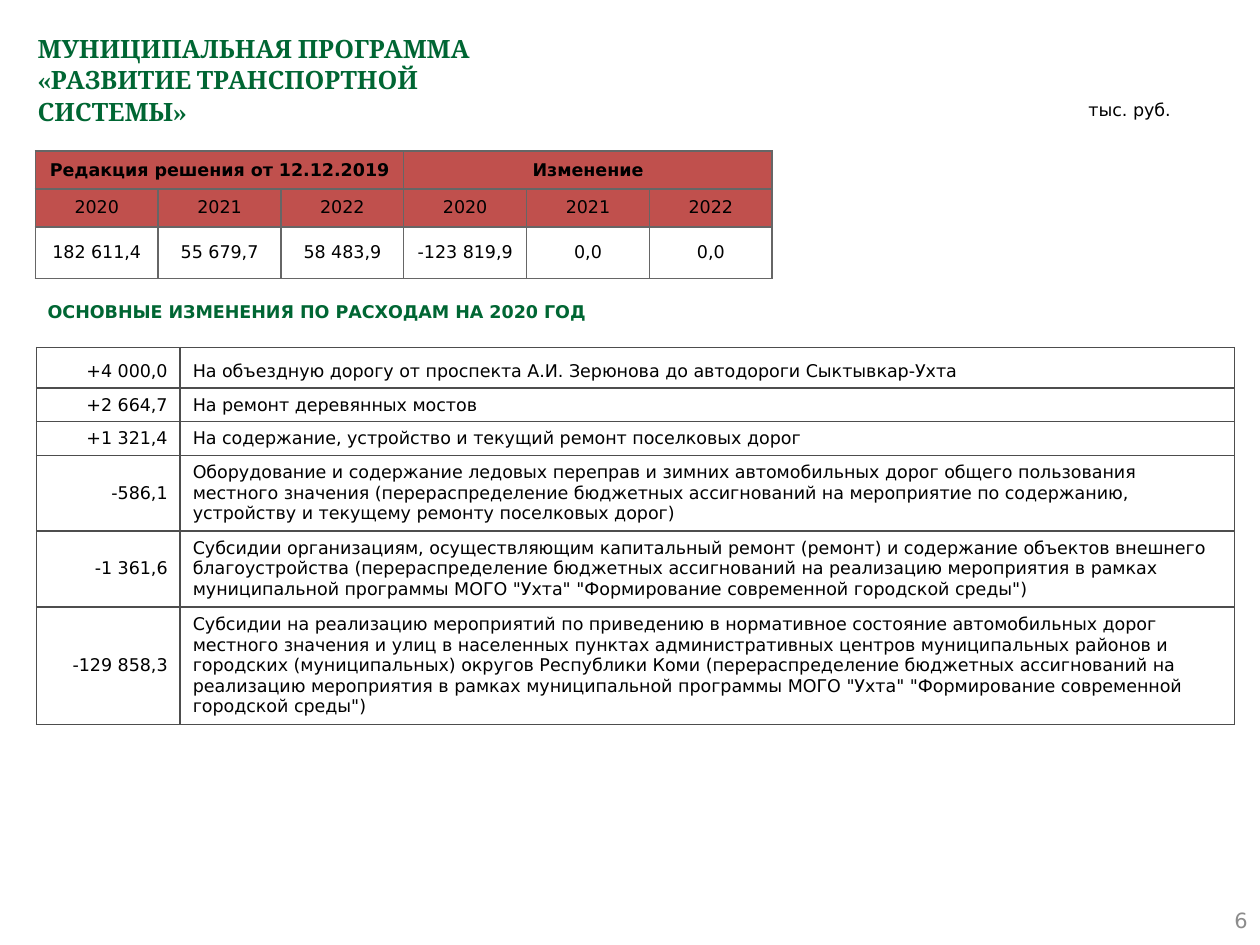
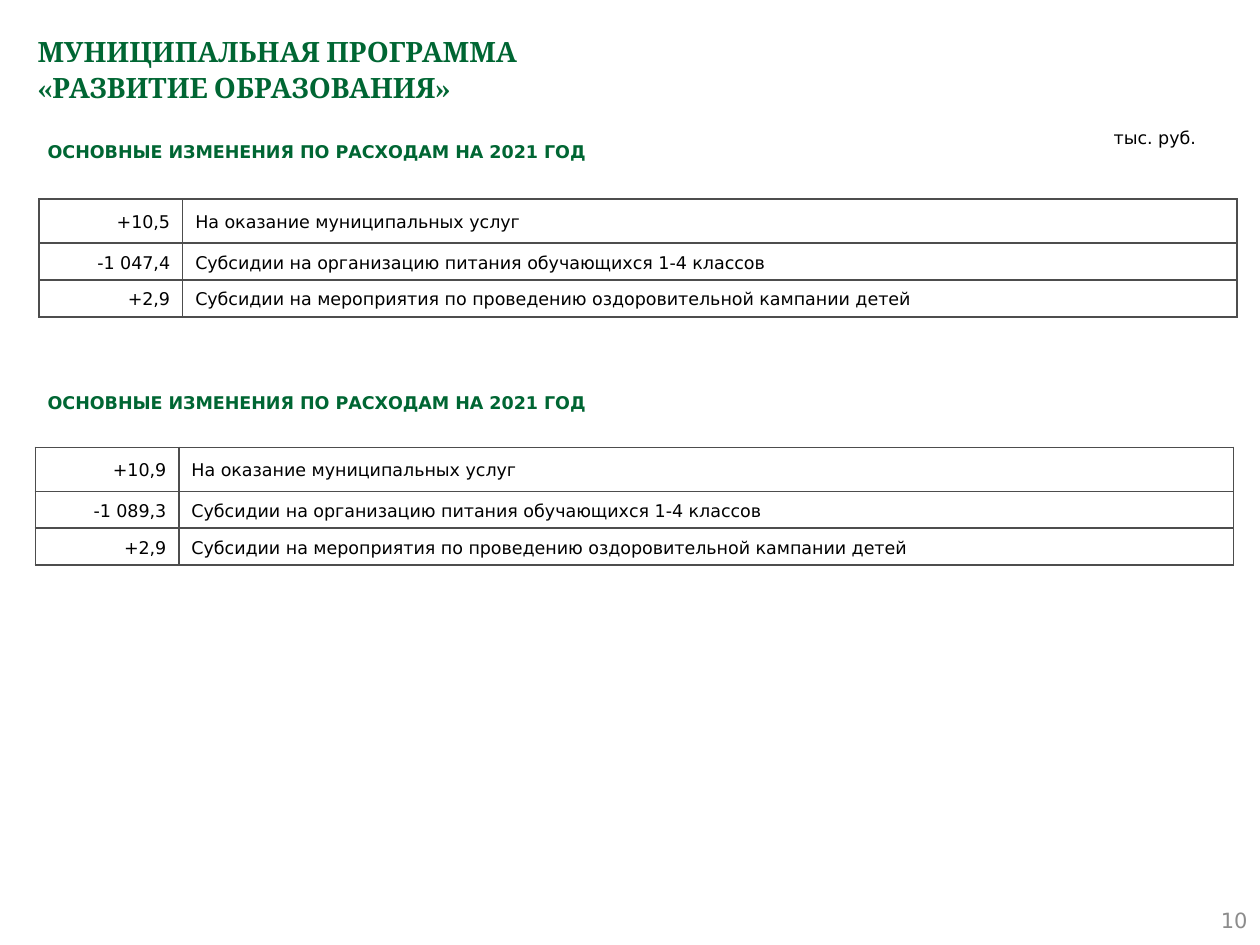
"""Build two slides on changes to municipal programme budgets."""
from lxml.etree import SubElement
from pptx import Presentation
from pptx.dml.color import RGBColor
from pptx.enum.shapes import MSO_SHAPE as Shape
from pptx.enum.text import MSO_ANCHOR as Anchor, PP_ALIGN as Align
from pptx.oxml.ns import qn
from pptx.util import Inches, Pt

GREEN, RED, BLACK, GRAY = "006633", "C0504D", "000000", "8C8C8C"
SUMMARY_BORDER, CHANGES_BORDER = "666666", "4D4D4D"
TITLE_FONT, BODY_FONT = "Cambria", "DejaVu Sans"
CHANGE_COLUMNS = [1.14, 8.37]
EDUCATION_ITEMS = [
    "На оказание муниципальных услуг",
    "Субсидии на организацию питания обучающихся 1-4 классов",
    "Субсидии на мероприятия по проведению оздоровительной кампании детей",
]
SUMMARY = [
    ["Редакция решения от 12.12.2019", "", "", "Изменение", "", ""],
    ["2020", "2021", "2022"] * 2,
    ["182 611,4", "55 679,7", "58 483,9", "-123 819,9", "0,0", "0,0"],
]
TRANSPORT_CHANGES = [
    ("+4 000,0", "На объездную дорогу от проспекта А.И. Зерюнова до автодороги Сыктывкар-Ухта"),
    ("+2 664,7", "На ремонт деревянных мостов"),
    ("+1 321,4", "На содержание, устройство и текущий ремонт поселковых дорог"),
    ("-586,1", "Оборудование и содержание ледовых переправ и зимних автомобильных дорог общего "
     "пользования местного значения (перераспределение бюджетных ассигнований на мероприятие "
     "по содержанию, устройству и текущему ремонту поселковых дорог)"),
    ("-1 361,6", "Субсидии организациям, осуществляющим капитальный ремонт (ремонт) и содержание "
     "объектов внешнего благоустройства (перераспределение бюджетных ассигнований на реализацию "
     "мероприятия в рамках муниципальной программы МОГО \"Ухта\" \"Формирование современной "
     "городской среды\")"),
    ("-129 858,3", "Субсидии на реализацию мероприятий по приведению в нормативное состояние "
     "автомобильных дорог местного значения и улиц в населенных пунктах административных центров "
     "муниципальных районов и городских (муниципальных) округов Республики Коми "
     "(перераспределение бюджетных ассигнований на реализацию мероприятия в рамках муниципальной "
     "программы МОГО \"Ухта\" \"Формирование современной городской среды\")"),
]
SLIDES = [
    {
        "title": "МУНИЦИПАЛЬНАЯ ПРОГРАММА\v«РАЗВИТИЕ ТРАНСПОРТНОЙ\vСИСТЕМЫ»",
        "title_size": 14.4, "title_spacing": 1.05, "number": "6", "unit_at": (8.54, 0.7),
        "sections": [
            {"year": 2020, "top": 2.26, "table_at": (0.29, 2.76), "spacing": 1, "after": 0,
             "heights": [0.32, 0.26, 0.26, 0.59, 0.58, 0.91], "bottom_rows": 3,
             "rows": TRANSPORT_CHANGES},
        ],
    },
    {
        "title": "МУНИЦИПАЛЬНАЯ ПРОГРАММА\v«РАЗВИТИЕ ОБРАЗОВАНИЯ»",
        "title_size": 16, "title_spacing": 1.09, "number": "10", "unit_at": (8.74, 0.93),
        "sections": [
            {"year": 2021, "top": top, "table_at": table_at, "spacing": 1.15, "after": 10,
             "heights": [0.35, 0.29, 0.29], "bottom_rows": 0,
             "rows": list(zip(amounts, EDUCATION_ITEMS))}
            for top, table_at, amounts in [
                (0.99, (0.31, 1.58), ["+10,5", "-1 047,4", "+2,9"]),
                (2.98, (0.28, 3.55), ["+10,9", "-1 089,3", "+2,9"]),
            ]
        ],
    },
]


def write(frame, text, size=10, color=BLACK, bold=False, font=BODY_FONT,
          align=Align.LEFT, spacing=1.0, after=0):
    """Put one styled paragraph into a text frame."""
    frame.word_wrap = True
    paragraph = frame.paragraphs[0]
    paragraph.text = text
    paragraph.alignment = align
    paragraph.line_spacing = spacing
    paragraph.space_after = Pt(after)
    paragraph.font.size = Pt(size)
    paragraph.font.name = font
    paragraph.font.bold = bold
    paragraph.font.color.rgb = RGBColor.from_string(color)


def add_grid(slide, position, widths, heights, border):
    """Add an unfilled table with thin borders and return it."""
    left, top = position
    table = slide.shapes.add_table(
        len(heights), len(widths), Inches(left), Inches(top),
        Inches(sum(widths)), Inches(sum(heights))).table
    table.first_row = table.horz_banding = False
    for column, width in zip(table.columns, widths):
        column.width = Inches(width)
    for row, height in zip(table.rows, heights):
        row.height = Inches(height)
    for cell in table.iter_cells():
        properties = cell._tc.get_or_add_tcPr()
        for side in ("a:lnL", "a:lnR", "a:lnT", "a:lnB"):
            line = SubElement(properties, qn(side), w=str(Pt(1)))
            SubElement(SubElement(line, qn("a:solidFill")), qn("a:srgbClr"), val=border)
        cell.fill.background()
        cell.vertical_anchor = Anchor.MIDDLE
    return table


presentation = Presentation()
presentation.slide_width, presentation.slide_height = Inches(10), Inches(7.5)
for content in SLIDES:
    slide = presentation.slides.add_slide(presentation.slide_layouts[6])
    title = slide.shapes.add_textbox(Inches(0.2), Inches(0.2), Inches(9.61), Inches(0.79))
    write(title.text_frame, content["title"], content["title_size"], GREEN, True, TITLE_FONT,
          spacing=content["title_spacing"])

    number = slide.shapes.add_textbox(Inches(7.67), Inches(7.1), Inches(2.33), Inches(0.4))
    number.text_frame.vertical_anchor = Anchor.MIDDLE
    write(number.text_frame, content["number"], 12, GRAY, align=Align.RIGHT)

    unit_left, unit_top = content["unit_at"]
    unit = slide.shapes.add_textbox(Inches(unit_left), Inches(unit_top), Inches(1.01), Inches(0.3))
    write(unit.text_frame, "тыс. руб.", spacing=1.2)

    for section in content["sections"]:
        heading = slide.shapes.add_shape(
            Shape.PENTAGON, Inches(0.28), Inches(section["top"]), Inches(5.32), Inches(0.43))
        heading.adjustments[0] = 0
        heading.shadow.inherit = False
        heading.fill.background()
        heading.line.fill.background()
        heading.text_frame.vertical_anchor = Anchor.MIDDLE
        write(heading.text_frame, f"ОСНОВНЫЕ ИЗМЕНЕНИЯ ПО РАСХОДАМ НА {section['year']} ГОД",
              color=GREEN, bold=True)

        changes = add_grid(slide, section["table_at"], CHANGE_COLUMNS, section["heights"],
                           CHANGES_BORDER)
        for row_index, row in enumerate(section["rows"]):
            for column_index, text in enumerate(row):
                cell = changes.cell(row_index, column_index)
                if row_index < section["bottom_rows"]:
                    cell.vertical_anchor = Anchor.BOTTOM
                write(cell.text_frame, text, align=(Align.RIGHT, Align.LEFT)[column_index],
                      spacing=section["spacing"], after=section["after"])

summary = add_grid(presentation.slides[0], (0.28, 1.2), [5.85 / 6] * 6, [0.3, 0.3, 0.41],
                   SUMMARY_BORDER)
for first in (0, 3):
    summary.cell(0, first).merge(summary.cell(0, first + 2))
for row_index, row in enumerate(SUMMARY):
    for column_index, text in enumerate(row):
        cell = summary.cell(row_index, column_index)
        cell.margin_left = cell.margin_right = Inches(0.05)
        cell.margin_top = cell.margin_bottom = Inches(0.05)
        if row_index < 2:
            cell.fill.solid()
            cell.fill.fore_color.rgb = RGBColor.from_string(RED)
        if text:
            write(cell.text_frame, text, bold=row_index == 0, align=Align.CENTER)

presentation.save("out.pptx")
